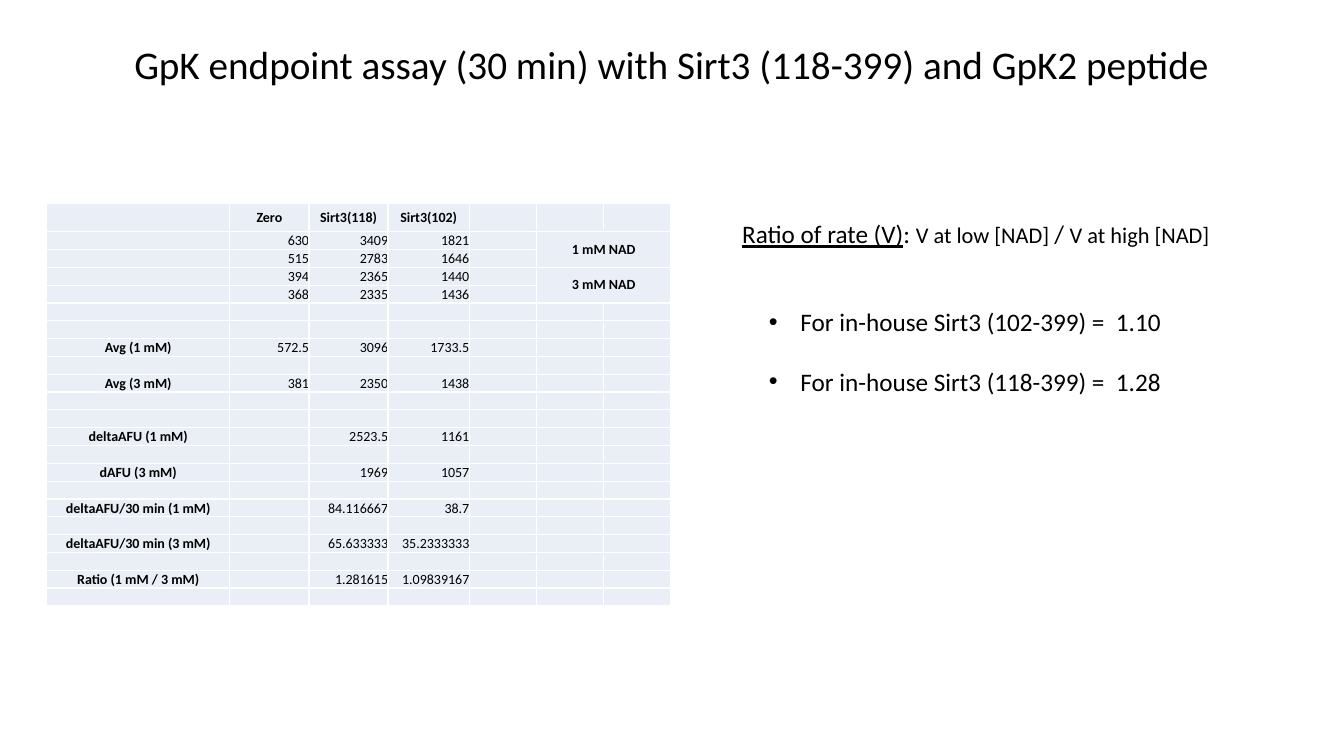
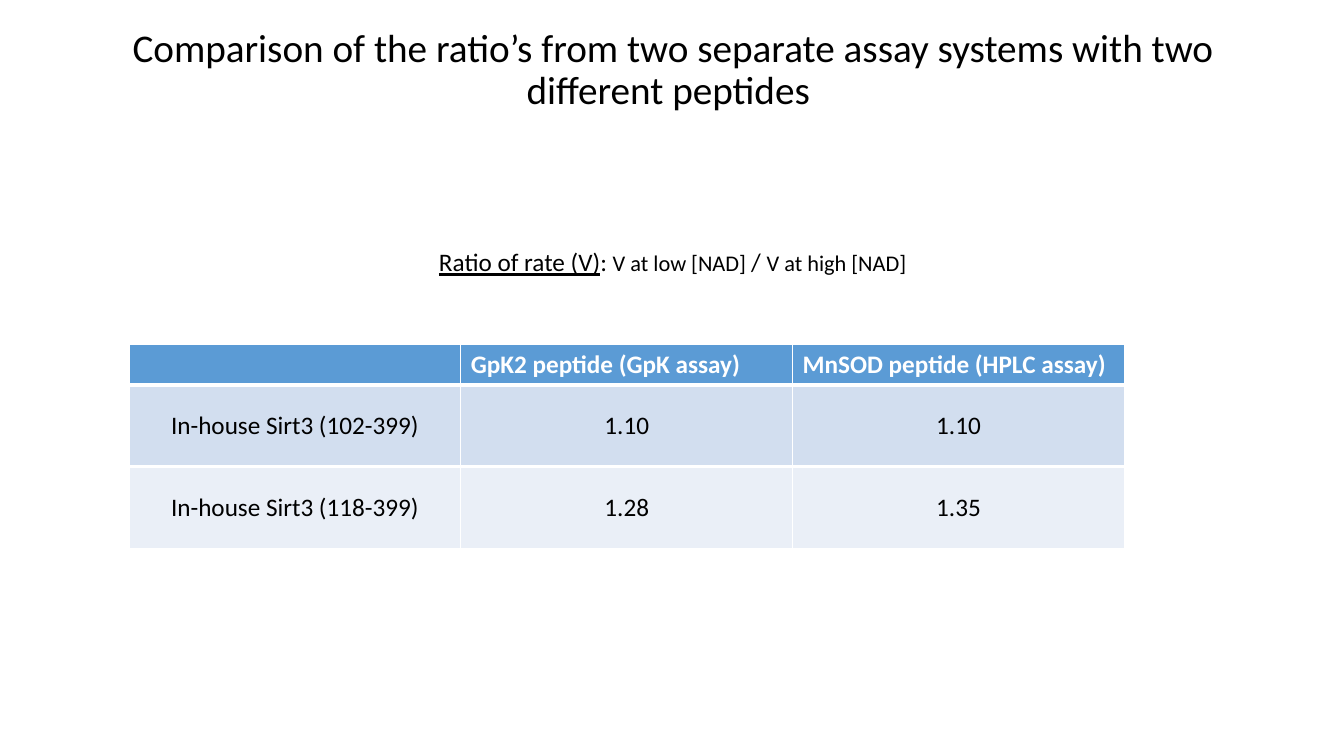
from lxml import etree
from pptx import Presentation
from pptx.dml.color import RGBColor
from pptx.enum import text
from pptx.oxml import ns
from pptx.util import Pt

BLACK = RGBColor(0, 0, 0)
WHITE = RGBColor(255, 255, 255)
BLUE = RGBColor(0x5B, 0x9B, 0xD5)
BAND = RGBColor(0xD2, 0xDE, 0xEF)
PALE = RGBColor(0xEA, 0xEF, 0xF7)
FONT = "Calibri"
LEFT, MID, RIGHT = text.PP_ALIGN.LEFT, text.PP_ALIGN.CENTER, text.PP_ALIGN.RIGHT
TOP, HALF, BASE = text.MSO_ANCHOR.TOP, text.MSO_ANCHOR.MIDDLE, text.MSO_ANCHOR.BOTTOM


def write(para, words, size, align=LEFT, color=BLACK, **more):
    para.alignment = align
    run = para.add_run()
    run.text = words
    run.font.color.rgb = color
    form = {"name": FONT, "size": Pt(size), **more}
    for key, value in form.items():
        setattr(run.font, key, value)


def place(shape, box, anchor=TOP, wrap=True):
    spots = zip(("left", "top", "width", "height"), box)
    for key, value in spots:
        setattr(shape, key, Pt(value))
    frame = shape.text_frame
    form = {"word_wrap": wrap, "vertical_anchor": anchor,
            "auto_size": text.MSO_AUTO_SIZE.NONE}
    for key, value in form.items():
        setattr(frame, key, value)
    return frame


deck = Presentation()
deck.slide_width, deck.slide_height = Pt(960), Pt(540)

heads = [
    (1, "GpK endpoint assay (30 min) with Sirt3 (118-399) and GpK2 peptide",
     (65.5, 11.5, 828, 72), (520.5, 152.6)),
    (5, "Comparison of the ratio’s from two separate assay systems "
        "with two different peptides ",
     (66.5, 12.2, 828, 76.3), (304, 172.5)),
]
ratio = [("Ratio of rate (V)", 18, True), (": ", 18, False),
         ("V at low [NAD] ", 16, False), ("/ ", 18, False),
         ("V at high [NAD]", 16, False)]

for kind, words, box, spot in heads:
    slide = deck.slides.add_slide(deck.slide_layouts[kind])
    para = place(slide.shapes.title, box, HALF).paragraphs[0]
    para.line_spacing = 0.9
    write(para, words, 28, MID)
    note = slide.shapes.add_textbox(0, 0, 0, 0)
    para = place(note, (*spot, 353, 29), wrap=False).paragraphs[0]
    for part, size, line in ratio:
        write(para, part, size, MID, underline=line)

assay, pair = deck.slides

items = ["For in-house Sirt3 (102-399) =  1.10",
         "For in-house Sirt3 (118-399) =  1.28"]
frame = place(assay.placeholders[1], (542, 215.3, 337, 94.3))
for i, item in enumerate(items):
    para = frame.paragraphs[0] if i == 0 else frame.add_paragraph()
    para.space_before = Pt(21 * i)
    props = para._p.get_or_add_pPr()
    props.set("marL", str(Pt(22.5)))
    props.set("indent", str(Pt(-22.5)))
    write(para, item, 18)

data = {
    0: ["", "Zero", "Sirt3(118)", "Sirt3(102)"],
    1: ["", "630", "3409", "1821", "", "1 mM NAD"],
    2: ["", "515", "2783", "1646"],
    3: ["", "394", "2365", "1440", "", "3 mM NAD"],
    4: ["", "368", "2335", "1436"],
    7: ["Avg (1 mM)", "572.5", "3096", "1733.5"],
    9: ["Avg (3 mM)", "381", "2350", "1438"],
    12: ["deltaAFU (1 mM)", "", "2523.5", "1161"],
    14: ["dAFU (3 mM)", "", "1969", "1057"],
    16: ["deltaAFU/30 min (1 mM)", "", "84.116667", "38.7"],
    18: ["deltaAFU/30 min (3 mM)", "", "65.633333", "35.2333333"],
    20: ["Ratio (1 mM / 3 mM)", "", "1.281615", "1.09839167"],
}
wides = [131, 56.5, 56.5, 58, 48, 48, 48]
highs = [20] + [12.75] * 21
grid = assay.shapes.add_table(len(highs), len(wides), Pt(33.2), Pt(145.5),
                              Pt(sum(wides)), Pt(sum(highs))).table
grid.first_row = grid.horz_banding = False
for col, wide in zip(grid.columns, wides):
    col.width = Pt(wide)
for r, high in enumerate(highs):
    grid.rows[r].height = Pt(high)
    row = data.get(r, [])
    for c in range(len(wides)):
        cell = grid.cell(r, c)
        cell.fill.solid()
        cell.fill.fore_color.rgb = PALE
        for side in ("left", "top", "right", "bottom"):
            setattr(cell, "margin_" + side, 0)
        para = cell.text_frame.paragraphs[0]
        words = row[c] if c < len(row) else ""
        if words:
            label = r == 0 or c in (0, 5)
            cell.vertical_anchor = HALF if r == 0 or c == 5 else BASE
            write(para, words, 10, MID if label else RIGHT, bold=label)
        else:
            etree.SubElement(para._p, ns.qn("a:endParaRPr"), sz="1000")
for r in (1, 3):
    grid.cell(r, 5).merge(grid.cell(r + 1, 6))

rows = [
    (29.2, BLUE, ["", "GpK2 peptide (GpK assay)", "MnSOD peptide (HPLC assay)"]),
    (58.3, BAND, ["In-house Sirt3 (102-399)", "1.10", "1.10"]),
    (58.3, PALE, ["In-house Sirt3 (118-399)", "1.28", "1.35"]),
]
edges = {0: "a:lnB", 1: "a:lnT"}
grid = pair.shapes.add_table(3, 3, Pt(92.2), Pt(245.8), Pt(711), Pt(145.8)).table
for r, (high, fill, row) in enumerate(rows):
    grid.rows[r].height = Pt(high)
    for c, words in enumerate(row):
        cell = grid.cell(r, c)
        cell.fill.solid()
        cell.fill.fore_color.rgb = fill
        cell.vertical_anchor = HALF if r else TOP
        if r in edges:
            edge = etree.Element(ns.qn(edges[r]), w=str(Pt(3)))
            paint = etree.SubElement(edge, ns.qn("a:solidFill"))
            etree.SubElement(paint, ns.qn("a:srgbClr"), val=str(WHITE))
            cell._tc.get_or_add_tcPr().insert(0, edge)
        if words:
            write(cell.text_frame.paragraphs[0], words, 18, MID if r else LEFT,
                  BLACK if r else WHITE, bold=r == 0)

deck.save("out.pptx")
